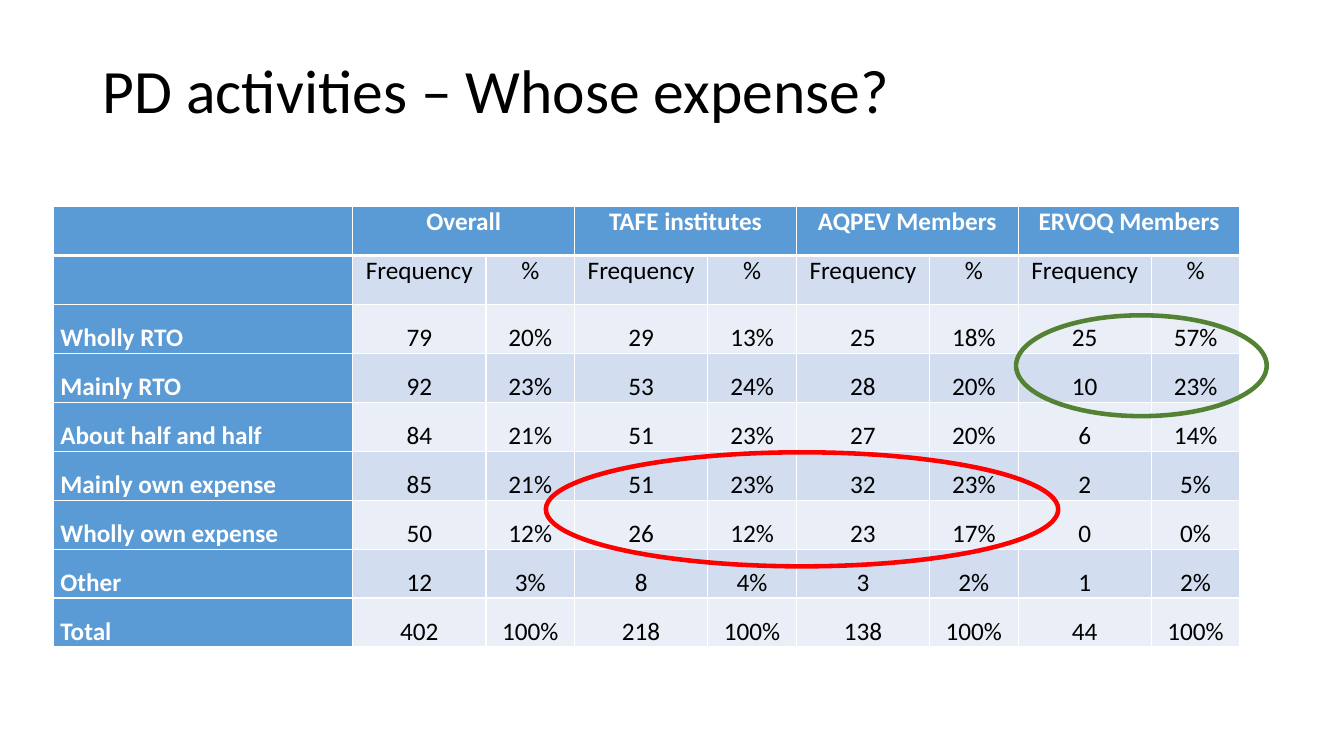
from lxml.etree import SubElement
from pptx import Presentation
from pptx.dml.color import RGBColor
from pptx.enum.shapes import MSO_SHAPE
from pptx.enum.text import MSO_ANCHOR, PP_ALIGN
from pptx.oxml.ns import qn
from pptx.util import Inches, Pt

# Content
TITLE = "PD activities – Whose expense?"
GROUPS = ["Overall", "TAFE institutes", "AQPEV Members", "ERVOQ Members"]
MEASURES = ["Frequency", "%"]
ROWS = [
    ("Wholly RTO", "79", "20%", "29", "13%", "25", "18%", "25", "57%"),
    ("Mainly RTO", "92", "23%", "53", "24%", "28", "20%", "10", "23%"),
    ("About half and half", "84", "21%", "51", "23%", "27", "20%", "6", "14%"),
    ("Mainly own expense", "85", "21%", "51", "23%", "32", "23%", "2", "5%"),
    ("Wholly own expense", "50", "12%", "26", "12%", "23", "17%", "0", "0%"),
    ("Other", "12", "3%", "8", "4%", "3", "2%", "1", "2%"),
    ("Total", "402", "100%", "218", "100%", "138", "100%", "44", "100%"),
]
# Rings: left and width in column groups, top and height in table rows
RINGS = [
    (2.99, 2.22, 1.13, 2.06, "548235"),
    (0.87, 5.02, 2.31, 2.33, "FF0000"),
]

# Grid in inches
LEFT, TOP = 0.53, 2.05
LABEL_W, MEASURE_W = 2.97, [1.32, 0.88]
GROUP_W = sum(MEASURE_W)
GRID = [[""] + [t for g in GROUPS for t in (g, "")],
        [""] + MEASURES * len(GROUPS), *ROWS]
ROW_H = 4.37 / len(GRID)
COLS = [LABEL_W] + MEASURE_W * len(GROUPS)

BLUE, BANDS, WHITE, BLACK = "5B9BD5", ["EAEFF7", "D2DEEF"], "FFFFFF", "000000"


def rgb(value):
    return RGBColor.from_string(value)


def set_attrs(target, values):
    for name, value in values.items():
        setattr(target, name, value)


def write(p, text, size, color, bold=False, **layout):
    set_attrs(p, layout)
    r = p.add_run()
    r.text = text
    set_attrs(r.font, {"name": "Calibri", "size": Pt(size), "bold": bold})
    r.font.color.rgb = rgb(color)


def add_borders(cell, header):
    tcPr = cell._tc.get_or_add_tcPr()
    for side in "LRTB":
        width = 3 if header and side == "B" else 1
        ln = SubElement(tcPr, qn(f"a:ln{side}"), w=str(Pt(width)))
        fill = SubElement(ln, qn("a:solidFill"))
        SubElement(fill, qn("a:srgbClr"), val=WHITE)


prs = Presentation()
prs.slide_width, prs.slide_height = Inches(13.33), Inches(7.5)
s = prs.slides.add_slide(prs.slide_layouts[5])

# Title
title = s.shapes.title
set_attrs(title, {"left": Inches(0.92), "top": Inches(0.55),
                  "width": Inches(11.5), "height": Inches(6.21)})
tf = title.text_frame
set_attrs(tf, {"word_wrap": True, "vertical_anchor": MSO_ANCHOR.TOP})
write(tf.paragraphs[0], TITLE, 44, BLACK, alignment=PP_ALIGN.LEFT,
      line_spacing=0.9, space_before=Pt(10))

# Table
table = s.shapes.add_table(len(GRID), len(COLS), Inches(LEFT), Inches(TOP),
                           Inches(sum(COLS)), Inches(ROW_H * len(GRID))).table
for column, width in zip(table.columns, COLS):
    column.width = Inches(width)
for i, texts in enumerate(GRID):
    table.rows[i].height = Inches(ROW_H)
    for j, text in enumerate(texts):
        cell = table.cell(i, j)
        strong = i == 0 or j == 0
        add_borders(cell, i == 0)
        cell.fill.solid()
        cell.fill.fore_color.rgb = rgb(BLUE if strong else BANDS[i % 2])
        if not text:
            continue
        set_attrs(cell, {
            "margin_left": Inches(0.07), "margin_right": Inches(0.07),
            "margin_top": 0, "margin_bottom": 0,
            "vertical_anchor": MSO_ANCHOR.TOP if i < 2 else MSO_ANCHOR.BOTTOM})
        gap = Pt(4 if i < 2 else 2)
        write(cell.text_frame.paragraphs[0], text, 18,
              WHITE if strong else BLACK, strong,
              alignment=PP_ALIGN.CENTER if j else PP_ALIGN.LEFT,
              space_before=gap, space_after=gap)
for j in range(1, len(COLS), len(MEASURES)):
    table.cell(0, j).merge(table.cell(0, j + 1))

# Rings around the highlighted values
for x, y, w, h, color in RINGS:
    ring = s.shapes.add_shape(
        MSO_SHAPE.OVAL, Inches(LEFT + LABEL_W + x * GROUP_W),
        Inches(TOP + y * ROW_H), Inches(w * GROUP_W), Inches(h * ROW_H))
    ring.shadow.inherit = False
    ring.fill.background()
    ring.line.color.rgb = rgb(color)
    ring.line.width = Pt(3.25)

prs.save("out.pptx")
